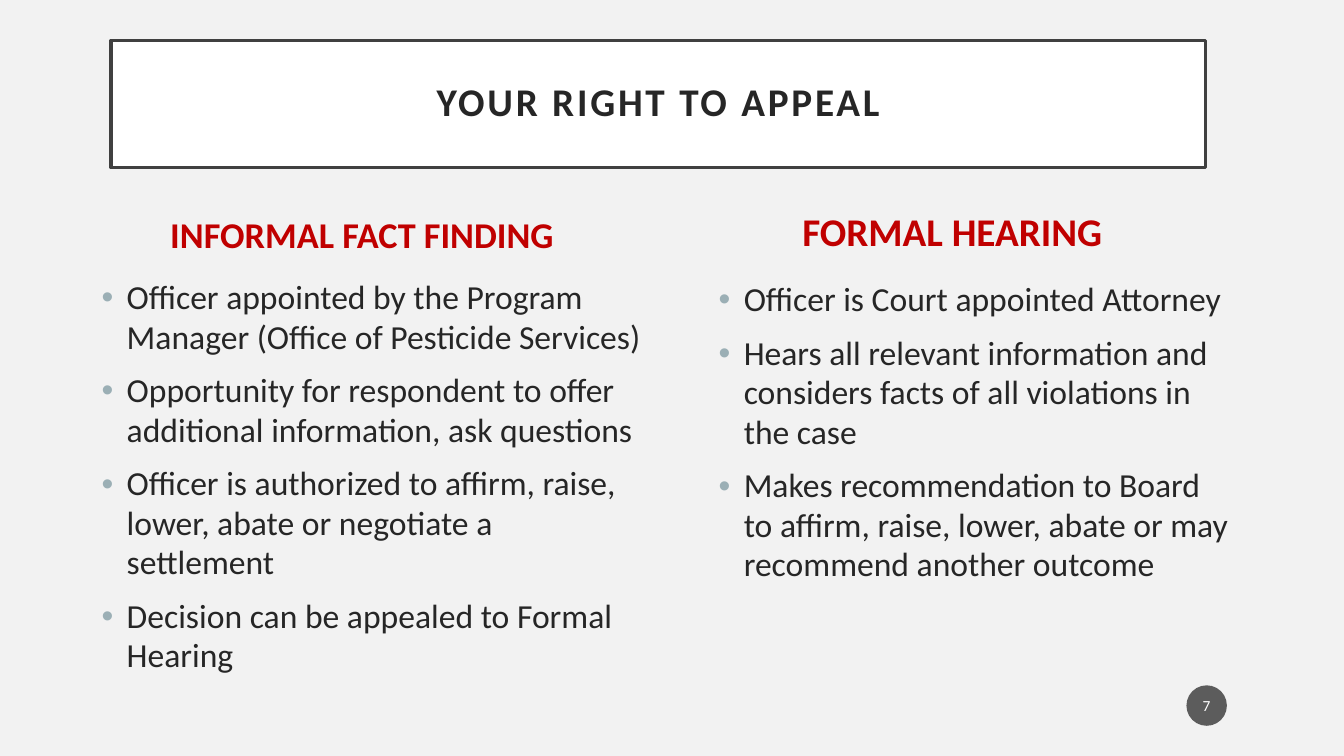
from lxml.etree import SubElement
from pptx import Presentation
from pptx.dml.color import RGBColor
from pptx.enum.shapes import MSO_SHAPE
from pptx.enum.text import MSO_ANCHOR, MSO_AUTO_SIZE, PP_ALIGN
from pptx.oxml.ns import qn
from pptx.util import Cm, Pt

PAPER = RGBColor(0xF2, 0xF2, 0xF2)
WHITE = RGBColor(0xFF, 0xFF, 0xFF)
INK = RGBColor(0x26, 0x26, 0x26)
FRAME = RGBColor(0x40, 0x40, 0x40)
RED = RGBColor(0xC0, 0x00, 0x00)
BADGE = RGBColor(0x1D, 0x1D, 0x1D)
BULLET = RGBColor(0x9B, 0xAF, 0xB5)

# Heading box, heading text and size, list box, list items
COLUMNS = [
    ((2.57, 5.0, 13.11, 1.8), "INFORMAL FACT FINDING", 25.9,
     (2.31, 6.88, 14.1, 9.88),
     ["Officer appointed by the Program Manager (Office of Pesticide Services)",
      "Opportunity for respondent to offer additional information, ask questions",
      "Officer is authorized to affirm, raise, lower, abate or negotiate a settlement",
      "Decision can be appealed to Formal Hearing"]),
    ((17.86, 4.98, 12.27, 1.7), "FORMAL HEARING", 28,
     (17.86, 6.93, 13.34, 10.16),
     ["Officer is Court appointed Attorney",
      "Hears all relevant information and considers facts of all violations in the case",
      "Makes recommendation to Board to affirm, raise, lower, abate or "
      "may recommend another outcome"]),
]


class SlideBuilder:
    font_name = "Calibri"

    def __init__(self, prs):
        self.s = prs.slides.add_slide(prs.slide_layouts[5])
        fill = self.s.background.fill
        fill.solid()
        fill.fore_color.rgb = PAPER

    def set_frame(self, tf, **values):
        values = {"word_wrap": True, "auto_size": MSO_AUTO_SIZE.NONE, **values}
        for name, value in values.items():
            setattr(tf, name, value)

    def add_text(self, p, text, color, **values):
        r = p.add_run()
        r.text = text
        for name, value in {"name": self.font_name, **values}.items():
            setattr(r.font, name, value)
        r.font.color.rgb = color
        return r

    def title(self, box, text):
        sp = self.s.shapes.title
        sp.left, sp.top, sp.width, sp.height = map(Cm, box)
        sp.fill.solid()
        sp.fill.fore_color.rgb = WHITE
        sp.line.color.rgb = FRAME
        sp.line.width = Pt(2.5)
        self.set_frame(sp.text_frame, vertical_anchor=MSO_ANCHOR.MIDDLE)
        p = sp.text_frame.paragraphs[0]
        p.alignment = PP_ALIGN.CENTER
        p.line_spacing = 0.9
        r = self.add_text(p, text, INK, size=Pt(28), bold=True)
        r._r.get_or_add_rPr().set("spc", "200")

    def heading(self, box, text, size):
        tf = self.s.shapes.add_textbox(*map(Cm, box)).text_frame
        self.set_frame(tf, vertical_anchor=MSO_ANCHOR.MIDDLE)
        p = tf.paragraphs[0]
        p.alignment = PP_ALIGN.CENTER
        self.add_text(p, text, RED, size=Pt(size), bold=True)

    def add_bullet(self, p):
        pPr = p._p.get_or_add_pPr()
        pPr.set("marL", str(Cm(0.635)))
        pPr.set("indent", str(-Cm(0.635)))
        color = SubElement(pPr, qn("a:buClr"))
        SubElement(color, qn("a:srgbClr"), val=str(BULLET))
        SubElement(pPr, qn("a:buFont"), typeface="Arial")
        SubElement(pPr, qn("a:buChar"), char="•")

    def bullets(self, box, items):
        tf = self.s.shapes.add_textbox(*map(Cm, box)).text_frame
        self.set_frame(tf)
        for i, item in enumerate(items):
            p = tf.add_paragraph() if i else tf.paragraphs[0]
            self.add_bullet(p)
            p.line_spacing = 0.98
            p.space_before = Pt(10 if i else 0)
            self.add_text(p, item, INK, size=Pt(24))

    def page_badge(self, box, number):
        sp = self.s.shapes.add_shape(MSO_SHAPE.OVAL, *map(Cm, box))
        sp.shadow.inherit = False
        sp.line.fill.background()
        sp.fill.solid()
        sp.fill.fore_color.rgb = BADGE
        color = sp._element.spPr.find(qn("a:solidFill")).find(qn("a:srgbClr"))
        SubElement(color, qn("a:alpha"), val="70000")
        self.set_frame(sp.text_frame, vertical_anchor=MSO_ANCHOR.MIDDLE,
                       word_wrap=False, margin_left=Cm(0.05), margin_right=Cm(0.05))
        p = sp.text_frame.paragraphs[0]
        p.alignment = PP_ALIGN.CENTER
        self.add_text(p, number, WHITE, size=Pt(11))


def main():
    prs = Presentation()
    prs.slide_width, prs.slide_height = Cm(33.87), Cm(19.05)
    slide = SlideBuilder(prs)

    # Title
    slide.title((2.8, 1.02, 27.58, 3.2), "YOUR RIGHT TO APPEAL")

    # The two kinds of appeal
    for heading_box, heading, size, list_box, items in COLUMNS:
        slide.heading(heading_box, heading, size)
        slide.bullets(list_box, items)

    # Page number
    slide.page_badge((29.9, 17.27, 1.02, 1.02), "7")

    prs.save("out.pptx")


if __name__ == "__main__":
    main()
